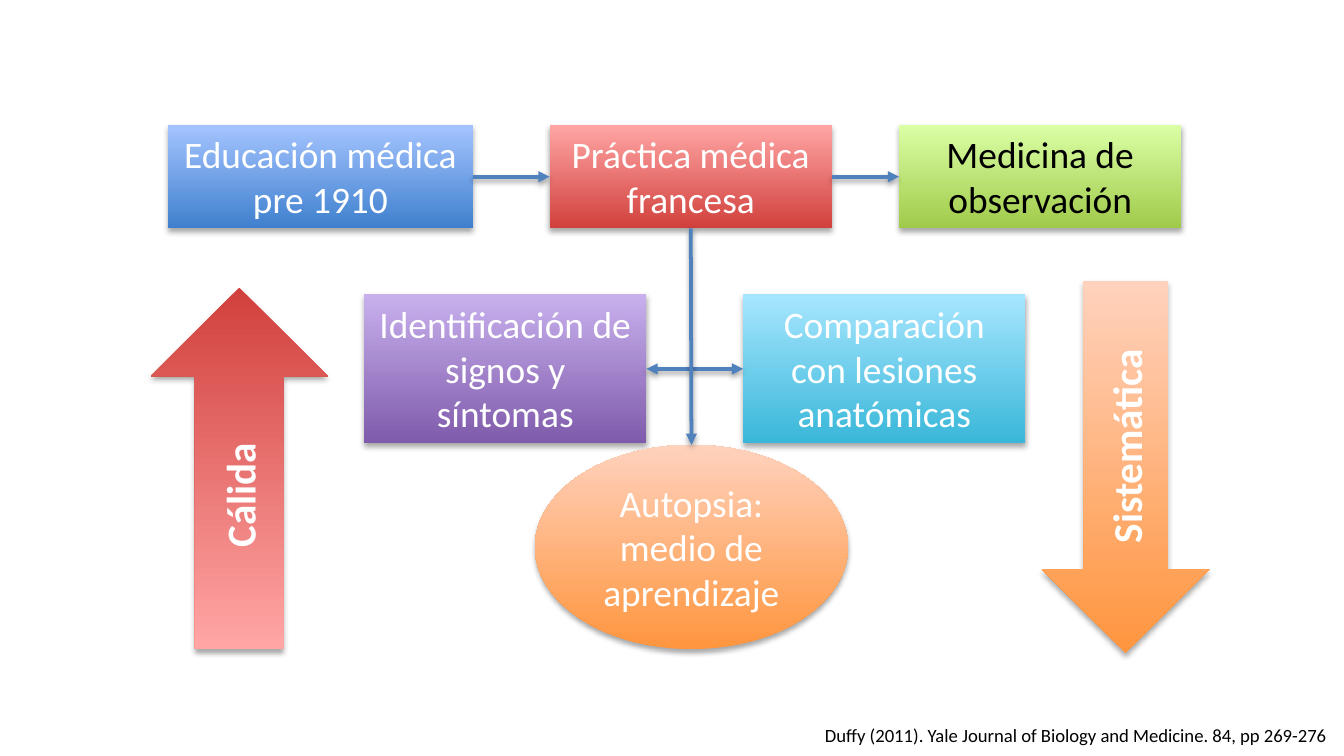
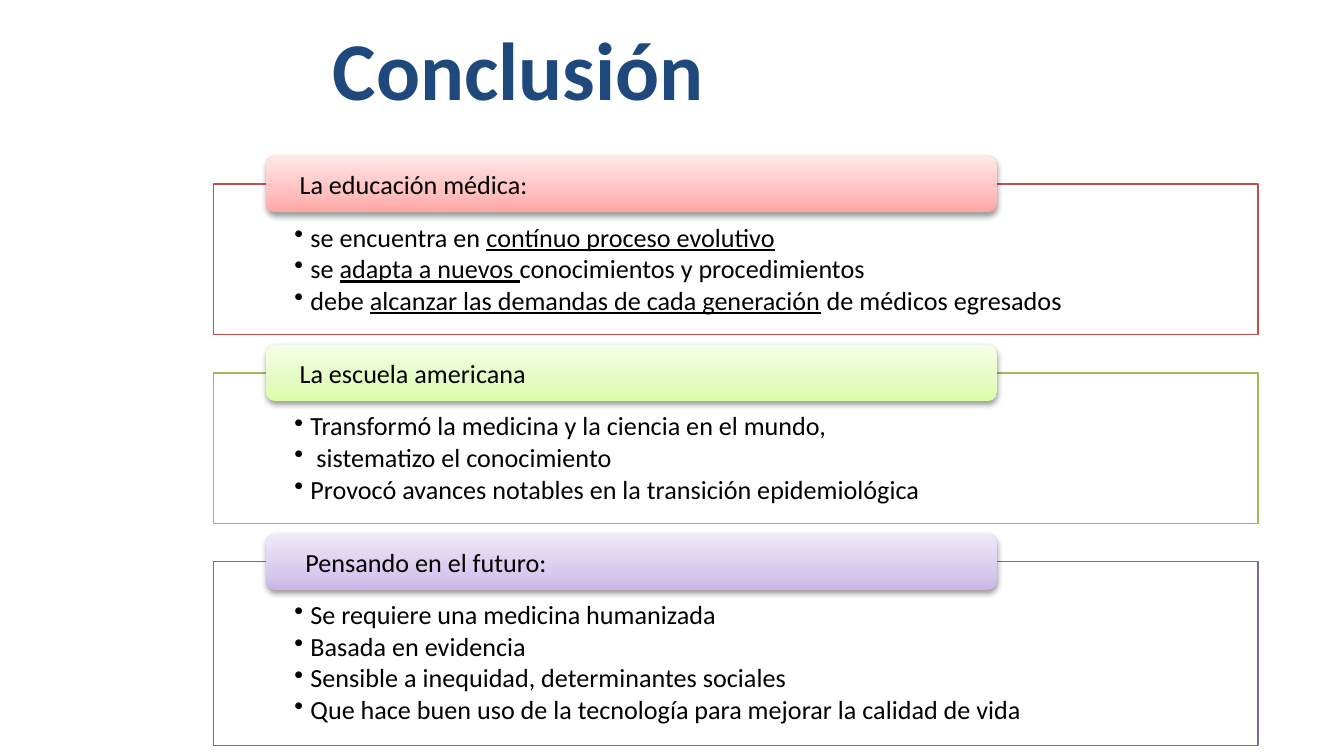
from copy import deepcopy
from dataclasses import dataclass

from lxml.etree import SubElement
from pptx import Presentation
from pptx.dml.color import RGBColor
from pptx.enum.shapes import MSO_CONNECTOR, MSO_SHAPE
from pptx.enum.text import MSO_ANCHOR, MSO_AUTO_SIZE, PP_ALIGN
from pptx.oxml.ns import qn
from pptx.util import Inches, Pt

CELL = Inches(0.1)
COLUMNS, ROWS = 100, 56.25
FONT = "Calibri"
COLORS = {
    "white": "FFFFFF",
    "black": "000000",
    "title": "1F497D",
    "arrow": "4F81BD",
    "red_line": "C0504D",
    "green_line": "9BBB59",
    "purple_line": "8064A2",
}
GRADIENTS = {
    "blue": {0: "3F80CE", 1: "A4C4FF"},
    "purple": {0: "7F5BAB", 1: "C8B0ED"},
    "green": {0: "A0CA4A", 1: "DAFFA5"},
    "red": {0: "D1403C", 1: "FFA6A5"},
    "aqua": {0: "39B7D8", 1: "A7E6FF"},
    "orange": {0: "FF953E", 1: "FFD2BD"},
    "pale_red": {0: "FFA6A5", 0.35: "FFC0BF", 1: "FFE7E7"},
    "pale_green": {0: "DAFDA7", 0.35: "E4FCC2", 1: "F5FFE7"},
    "pale_purple": {0: "C9B5E8", 0.35: "D8CBEE", 1: "F0EAF9"},
}
TOP, LEFT, BOTTOM, RIGHT = range(4)
CONCLUSIONS = [
    ("red", 11.2, "La educación médica:", [
        "se encuentra en _contínuo proceso evolutivo_",
        "se _adapta a nuevos _conocimientos y procedimientos",
        "debe _alcanzar las demandas de cada generación_ de médicos egresados",
    ]),
    ("green", 11.2, "La escuela americana", [
        "Transformó la medicina y la ciencia en el mundo,",
        " sistematizo el conocimiento",
        "Provocó avances notables en la transición epidemiológica",
    ]),
    ("purple", 13.7, " Pensando en el futuro:", [
        "Se requiere una medicina humanizada",
        "Basada en evidencia",
        "Sensible a inequidad, determinantes sociales",
        "Que hace buen uso de la tecnología para mejorar la calidad de vida",
    ]),
]


@dataclass
class Box:
    left: float
    top: float
    width: float
    height: float

    def inner(self, left, top, width, height):
        return Box(self.left + left, self.top + top, width, height)

    def emu(self):
        lengths = (self.left, self.top, self.width, self.height)
        return [round(length * CELL) for length in lengths]


def rgb(name):
    return RGBColor.from_string(COLORS[name])


def set_font(paragraph, size, color, bold=False):
    font = paragraph.font
    font.name, font.size, font.bold = FONT, Pt(size), bold
    font.color.rgb = rgb(color)


def add_shadow(properties, opacity, distance):
    effects = properties.find(qn("a:effectLst"))
    if effects is None:
        effects = SubElement(properties, qn("a:effectLst"))
    shadow = SubElement(effects, qn("a:outerShdw"), blurRad=str(Pt(3.1)),
                        dist=str(Pt(distance)), dir="5400000", rotWithShape="0")
    black = SubElement(shadow, qn("a:srgbClr"), val=COLORS["black"])
    SubElement(black, qn("a:alpha"), val=str(opacity * 1000))


def fill_gradient(shape, stops):
    shape.fill.gradient()
    shape.fill.gradient_angle = 90
    stop_list = shape.element.spPr.find(".//" + qn("a:gsLst"))
    while len(stop_list) < len(stops):
        stop_list.insert(1, deepcopy(stop_list[0]))
    for stop, (position, color) in zip(shape.fill.gradient_stops, stops.items()):
        stop.position = position
        stop.color.rgb = RGBColor.from_string(color)


def add_glossy(slide, kind, box, gradient, opacity=35, distance=1.8):
    shape = slide.shapes.add_shape(kind, *box.emu())
    fill_gradient(shape, GRADIENTS[gradient])
    shape.line.fill.background()
    shape.shadow.inherit = False
    add_shadow(shape.element.spPr, opacity, distance)
    return shape


def write(shape, text, size, color="white", align=PP_ALIGN.CENTER,
          anchor=MSO_ANCHOR.MIDDLE, bold=False):
    frame = shape.text_frame
    frame.word_wrap = True
    frame.vertical_anchor = anchor
    paragraph = frame.paragraphs[0]
    paragraph.text = text
    paragraph.alignment = align
    set_font(paragraph, size, color, bold)
    return frame


def add_concept(slide, box, text, gradient, color="white"):
    concept = add_glossy(slide, MSO_SHAPE.RECTANGLE, box, gradient)
    frame = write(concept, text, 20, color, anchor=MSO_ANCHOR.TOP)
    frame.auto_size = MSO_AUTO_SIZE.SHAPE_TO_FIT_TEXT
    return concept


def link(slide, start, start_site, end, end_site, both_ways=False):
    arrow = slide.shapes.add_connector(MSO_CONNECTOR.STRAIGHT, 0, 0, 0, 0)
    arrow.begin_connect(start, start_site)
    arrow.end_connect(end, end_site)
    arrow.line.color.rgb = rgb("arrow")
    arrow.line.width = Pt(2)
    properties = arrow.element.spPr
    line = properties.find(qn("a:ln"))
    if both_ways:
        SubElement(line, qn("a:headEnd"), type="triangle")
    SubElement(line, qn("a:tailEnd"), type="triangle")
    add_shadow(properties, 38, 1.6)


def add_concept_map(slide, box):
    education = add_concept(slide, box.inner(0, 0, 22.7, 7.7),
                            "Educación médica pre 1910", "blue")
    practice = add_concept(slide, box.inner(28.4, 0, 21, 7.7),
                           "Práctica médica francesa", "red")
    observation = add_concept(slide, box.inner(54.4, 0, 21, 7.7),
                              "Medicina de observación", "green", "black")
    signs = add_concept(slide, box.inner(14.6, 12.6, 21, 11.1),
                        "Identificación de signos y síntomas", "purple")
    lesions = add_concept(slide, box.inner(42.8, 12.6, 21, 11.1),
                          "Comparación con lesiones anatómicas", "aqua")
    autopsy = add_glossy(slide, MSO_SHAPE.OVAL,
                         box.inner(27.3, 23.8, 23.3, 15.2), "orange")
    write(autopsy, "Autopsia: medio de aprendizaje", 20)
    link(slide, education, RIGHT, practice, LEFT)
    link(slide, practice, RIGHT, observation, LEFT)
    link(slide, signs, RIGHT, lesions, LEFT, both_ways=True)
    link(slide, practice, BOTTOM, autopsy, TOP)


def add_trend(slide, box, text, gradient, direction, rotation=0):
    trend = add_glossy(slide, MSO_SHAPE.DOWN_ARROW, box, gradient)
    trend.rotation = rotation
    frame = write(trend, text, 22, bold=True)
    frame._txBody.bodyPr.set("vert", direction)


def add_citation(slide, box, text):
    citation = slide.shapes.add_textbox(*box.emu())
    frame = write(citation, text, 10, "black", PP_ALIGN.LEFT, MSO_ANCHOR.TOP)
    frame.auto_size = MSO_AUTO_SIZE.SHAPE_TO_FIT_TEXT


def add_title(slide, box, text):
    title = slide.shapes.title
    title.left, title.top, title.width, title.height = box.emu()
    frame = write(title, text, 44, "title", anchor=MSO_ANCHOR.TOP, bold=True)
    frame.margin_top = Inches(0.08)


def add_bullet(paragraph, text):
    paragraph.level = 1
    paragraph.alignment = PP_ALIGN.LEFT
    paragraph.line_spacing = 0.9
    paragraph.space_after = Pt(1.8)
    properties = paragraph._p.get_or_add_pPr()
    indent = Inches(0.12)
    properties.set("marL", str(indent))
    properties.set("indent", str(-indent))
    SubElement(properties, qn("a:buChar"), char="•")
    set_font(paragraph, 14, "black")
    for index, part in enumerate(text.split("_")):
        if part:
            run = paragraph.add_run()
            run.text = part
            if index % 2:
                run.font.underline = True


def add_conclusion(slide, box, hue, heading, points):
    panel = slide.shapes.add_shape(MSO_SHAPE.RECTANGLE, *box.emu())
    panel.shadow.inherit = False
    panel.fill.solid()
    panel.fill.fore_color.rgb = rgb("white")
    white = panel.element.spPr.find(qn("a:solidFill"))[0]
    SubElement(white, qn("a:alpha"), val="90000")
    panel.line.color.rgb = rgb(f"{hue}_line")
    panel.line.width = Pt(0.75)
    frame = panel.text_frame
    frame.word_wrap = True
    frame.vertical_anchor = MSO_ANCHOR.TOP
    frame.margin_left = frame.margin_right = Inches(0.6)
    frame.margin_top, frame.margin_bottom = Inches(0.3), Inches(0.11)
    for index, point in enumerate(points):
        paragraph = frame.add_paragraph() if index else frame.paragraphs[0]
        add_bullet(paragraph, point)

    tab_box = box.inner(box.width * 0.05, -2.1, box.width * 0.7, 4.2)
    tab = add_glossy(slide, MSO_SHAPE.ROUNDED_RECTANGLE, tab_box,
                     f"pale_{hue}", 38, 1.6)
    tab_frame = write(tab, heading, 14, "black", PP_ALIGN.LEFT)
    tab_frame.margin_left = tab_frame.margin_right = Inches(0.23)
    tab_frame.margin_top = tab_frame.margin_bottom = 0


def add_conclusions(slide, box):
    top = 0
    for hue, height, heading, points in CONCLUSIONS:
        add_conclusion(slide, box.inner(0, top, box.width, height),
                       hue, heading, points)
        top += height + 2.85


def build_history(deck):
    slide = deck.slides.add_slide(deck.slide_layouts[6])
    add_concept_map(slide, Box(12.5, 9.3, 75.4, 39))
    add_trend(slide, Box(77.5, 20.9, 12.5, 27.7), "Sistemática", "orange", "vert270")
    add_trend(slide, Box(11.2, 21.4, 13.2, 26.9), "Cálida ", "red", "vert", 180)
    add_citation(slide, Box(60.4, 53.4, 39.6, 2.7),
                 "Duffy (2011). Yale Journal of Biology and Medicine. 84, pp 269-276")


def build_conclusion(deck):
    slide = deck.slides.add_slide(deck.slide_layouts[5])
    add_title(slide, Box(-3.9, 0.6, 85, 12), "Conclusión")
    add_conclusions(slide, Box(15.9, 13.7, 77.7, 41.8))


def main():
    deck = Presentation()
    deck.slide_width = round(COLUMNS * CELL)
    deck.slide_height = round(ROWS * CELL)
    build_history(deck)
    build_conclusion(deck)
    deck.save("out.pptx")


if __name__ == "__main__":
    main()
